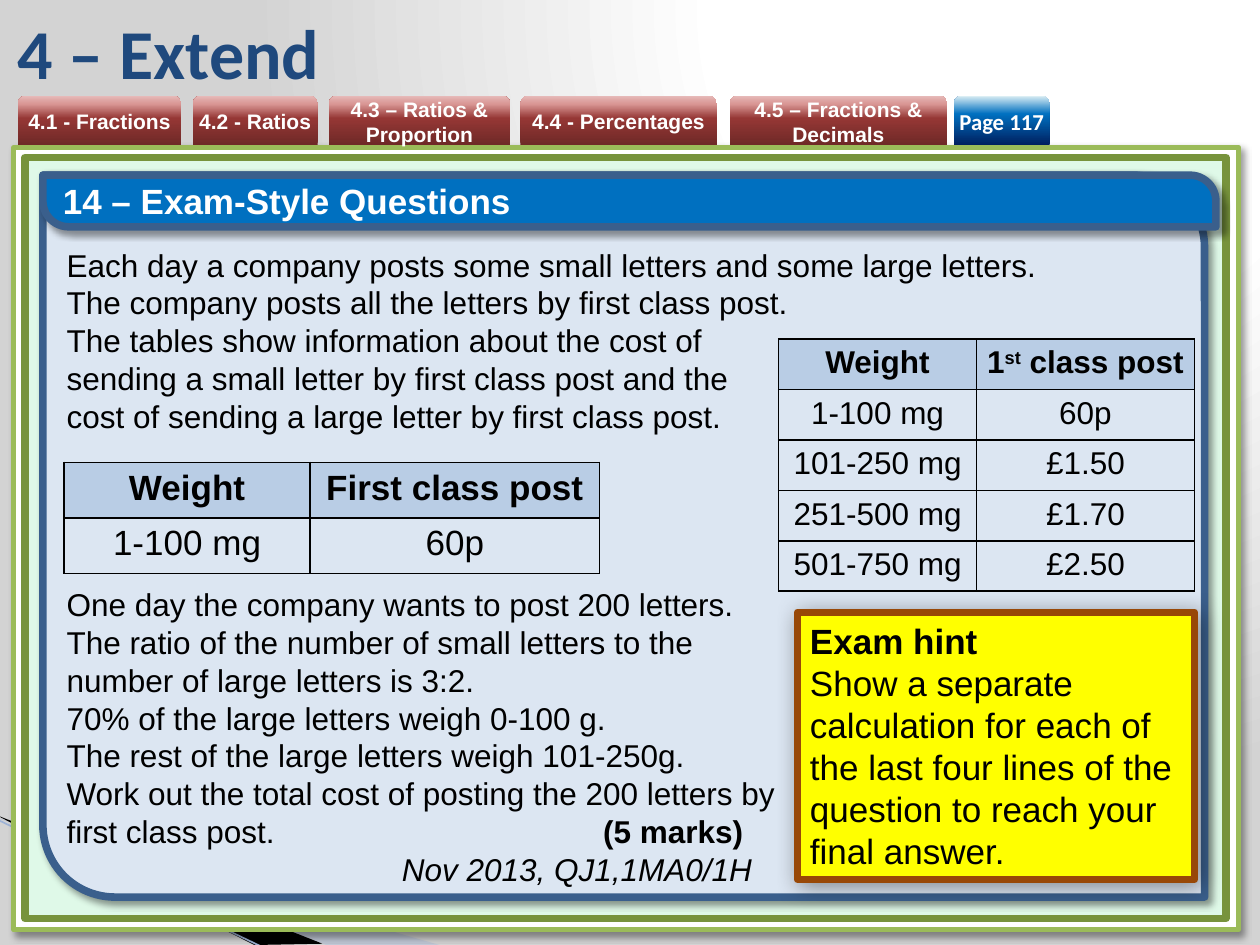
"""Build the exam-style question slide on the cost of posting letters."""
from pptx import Presentation
from pptx.dml.color import RGBColor
from pptx.enum.shapes import MSO_CONNECTOR as Connector, MSO_SHAPE as Shape
from pptx.enum.text import MSO_ANCHOR as Anchor, PP_ALIGN as Align
from pptx.oxml import parse_xml
from pptx.oxml.ns import nsdecls
from pptx.util import Inches, Pt

COLORS = {
    "white": "FFFFFF", "black": "000000", "title": "1F497D", "panel": "DCE6F2",
    "edge": "3A5F8C", "blue": "0070C0", "lime": "9BBB59", "olive": "77933C",
    "mint": "DFF9E8", "yellow": "FFFF00", "brown": "984807", "head": "B9CDE5",
    "wedge": "A7B9DB", "streak": "9EB3D6",
}
RED_STOPS = [(0, "6F2927"), (54, "953735"), (83, "D99694"), (100, "E6B9B8")]
BLUE_STOPS = [(0, "002060"), (63, "0070C0"), (100, "DBEEF4")]
PAGE_STOPS = [(0, "FFFFFF"), (40, "FFFFFF"), (100, "D3D3D3")]
UPWARD = '<a:lin ang="16200000" scaled="0"/>'
CIRCLE = '<a:path path="circle"><a:fillToRect l="65000" t="0" r="0" b="98000"/></a:path>'
TABS = [
    ("4.1 - Fractions", 0.14, 1.3), ("4.2 - Ratios", 1.53, 0.99),
    ("4.3 – Ratios & Proportion", 2.61, 1.44), ("4.4 - Percentages", 4.13, 1.56),
    ("4.5 – Fractions & Decimals", 5.79, 1.73),
]
QUESTION = [
    "Each day a company posts some small letters and some large letters.",
    "The company posts all the letters by first class post.",
    "The tables show information about the cost of\n"
    "sending a small letter by first class post and the\n"
    "cost of sending a large letter by first class post.",
    "One day the company wants to post 200 letters.",
    "The ratio of the number of small letters to the\nnumber of large letters is 3:2.",
    "70% of the large letters weigh 0-100 g.",
    "The rest of the large letters weigh 101-250g.",
    "Work out the total cost of posting the 200 letters by",
    [("first class post.\t", {}), ("(5 marks)", {"bold": True})],
    [("\t", {}), ("Nov 2013, QJ1,1MA0/1H", {"italic": True})],
]
SMALL_POST = [["Weight", "First class post"], ["1-100 mg", "60p"]]
LARGE_POST = [
    ["Weight", [("1", {}), ("st", {"raised": True}), (" class post", {})]],
    ["1-100 mg", "60p"], ["101-250 mg", "£1.50"],
    ["251-500 mg", "£1.70"], ["501-750 mg", "£2.50"],
]


def color(name):
    """Return the named colour."""
    return RGBColor.from_string(COLORS[name])


def add_span(para, text, size, font, ink, bold=False, italic=False, raised=False):
    """Add one formatted run to a paragraph."""
    span = para.add_run()
    span.text = text
    span.font.size, span.font.name = Pt(size), font
    span.font.bold, span.font.italic = bold, italic
    span.font.color.rgb = color(ink)
    if raised:
        span._r.get_or_add_rPr().set("baseline", "30000")


def write(frame, paragraphs, size=18, font="Arial", ink="black", bold=False,
          align=Align.LEFT, anchor=Anchor.MIDDLE, inset=None):
    """Fill a text frame with paragraphs given as strings or lists of spans."""
    frame.word_wrap, frame.vertical_anchor = True, anchor
    if inset is not None:
        frame.margin_left = frame.margin_right = Inches(inset)
        frame.margin_top = frame.margin_bottom = Inches(inset)
    for index, content in enumerate(paragraphs):
        para = frame.add_paragraph() if index else frame.paragraphs[0]
        para.alignment = align
        spans = [(content, {})] if isinstance(content, str) else content
        for text, changes in spans:
            for row, line in enumerate(text.split("\n")):
                if row:
                    para.add_line_break()
                add_span(para, line, **{"size": size, "font": font, "ink": ink,
                                        "bold": bold, **changes})


def set_gradient(owner, fill, stops, direction):
    """Give a fill gradient stops and a direction."""
    fill.gradient()
    old = owner.xpath(".//a:gradFill")[0]
    marks = "".join(f'<a:gs pos="{place * 1000}"><a:srgbClr val="{value}"/></a:gs>'
                    for place, value in stops)
    new = parse_xml(f'<a:gradFill {nsdecls("a")} rotWithShape="1">'
                    f'<a:gsLst>{marks}</a:gsLst>{direction}</a:gradFill>')
    old.getparent().replace(old, new)


def add_shadow(shape, blur=4):
    """Add a soft shadow to the lower right."""
    shape._element.spPr.append(parse_xml(
        f'<a:effectLst {nsdecls("a")}><a:outerShdw blurRad="{Pt(blur)}" dist="{Pt(3)}" '
        'dir="2700000" algn="tl" rotWithShape="0"><a:srgbClr val="000000">'
        '<a:alpha val="40000"/></a:srgbClr></a:outerShdw></a:effectLst>'))


def add_panel(slide, kind, place, fill, line, width, blur=None, corners=()):
    """Add a filled and outlined box."""
    box = slide.shapes.add_shape(kind, *map(Inches, place))
    for index, value in enumerate(corners):
        box.adjustments[index] = value
    box.fill.solid()
    box.fill.fore_color.rgb = color(fill)
    box.line.color.rgb, box.line.width = color(line), Pt(width)
    if blur is None:
        box.shadow.inherit = False
    else:
        add_shadow(box, blur)
    return box


def add_tab(slide, label, left, width, stops=RED_STOPS, **style):
    """Add a navigation tab."""
    tab = slide.shapes.add_shape(Shape.ROUND_2_SAME_RECTANGLE, Inches(left),
                                 Inches(0.76), Inches(width), Inches(0.39))
    set_gradient(tab._element, tab.fill, stops, UPWARD)
    tab.line.fill.background()
    tab.shadow.inherit = False
    write(tab.text_frame, [label], ink="white", bold=True, align=Align.CENTER,
          inset=0, **{"size": 12, **style})


def add_wedge(slide, points, fill, alpha=100):
    """Add a filled corner outline."""
    start, *rest = [(Inches(x), Inches(y)) for x, y in points]
    builder = slide.shapes.build_freeform(*start)
    builder.add_line_segments(rest)
    wedge = builder.convert_to_shape()
    wedge.fill.solid()
    wedge.fill.fore_color.rgb = color(fill)
    tint = wedge._element.spPr.xpath("./a:solidFill/a:srgbClr")[0]
    tint.append(parse_xml(f'<a:alpha {nsdecls("a")} val="{alpha * 1000}"/>'))
    wedge.line.fill.background()
    wedge.shadow.inherit = False


def add_streak(slide):
    """Add the thin line along the corner wedges."""
    streak = slide.shapes.add_connector(Connector.STRAIGHT, Inches(-0.01), Inches(6.51),
                                        Inches(2.09), Inches(7.52))
    streak.line.color.rgb, streak.line.width = color("streak"), Pt(0.95)
    streak._element.spPr.append(parse_xml(f'<a:effectLst {nsdecls("a")}/>'))


def add_prices(slide, rows, left, top, widths, height, size):
    """Add a ruled price table with a tinted heading row."""
    table = slide.shapes.add_table(len(rows), len(widths), Inches(left), Inches(top),
                                   Inches(sum(widths)), Inches(height * len(rows))).table
    for column, width in zip(table.columns, widths):
        column.width = Inches(width)
    for index, row in enumerate(rows):
        table.rows[index].height = Inches(height)
        for cell, content in zip(table.rows[index].cells, row):
            write(cell.text_frame, [content], size=size, bold=index == 0, align=Align.CENTER)
            cell.margin_left = cell.margin_right = Inches(0.05)
            cell.margin_top = cell.margin_bottom = Inches(0.05)
            cell.vertical_anchor = Anchor.TOP
            if index:
                cell.fill.background()
            else:
                cell.fill.solid()
                cell.fill.fore_color.rgb = color("head")
            for order, side in enumerate("LRTB"):
                cell._tc.get_or_add_tcPr().insert(order, parse_xml(
                    f'<a:ln{side} {nsdecls("a")} w="{Pt(1)}"><a:solidFill>'
                    f'<a:srgbClr val="{COLORS["black"]}"/></a:solidFill></a:ln{side}>'))


def add_question(slide):
    """Add the question text with its right tab and the gap for the small table."""
    box = slide.shapes.add_textbox(Inches(0.43), Inches(1.9), Inches(9.08), Inches(5.25))
    write(box.text_frame, QUESTION, anchor=Anchor.TOP)
    paragraphs = box.text_frame.paragraphs
    paragraphs[3].space_before = Pt(86)
    for para, stop in zip(paragraphs[-2:], (5.37, 5.44)):
        para._p.get_or_add_pPr().append(parse_xml(
            f'<a:tabLst {nsdecls("a")}><a:tab pos="{Inches(stop)}" algn="r"/></a:tabLst>'))


def main():
    """Build and save the deck."""
    deck = Presentation()
    deck.slide_width, deck.slide_height = Inches(10), Inches(7.5)
    slide = deck.slides.add_slide(deck.slide_layouts[5])
    set_gradient(slide.element, slide.background.fill, PAGE_STOPS, CIRCLE)
    title = slide.shapes.title
    title.left, title.top, title.width, title.height = map(Inches, (0.04, 0.05, 8.27, 0.71))
    write(title.text_frame, ["4 – Extend"], size=40, font="Calibri", ink="title", bold=True)
    add_wedge(slide, [(-0.01, 6.5), (3.49, 7.5), (2.59, 7.5), (-0.01, 6.49)], "wedge", 40)
    add_wedge(slide, [(0, 6.48), (2.56, 7.49), (2.02, 7.5), (0.01, 6.49)], "black")
    add_streak(slide)
    add_panel(slide, Shape.RECTANGLE, (0.11, 1.17, 9.72, 6.21), "white", "lime", 3, blur=4)
    add_panel(slide, Shape.RECTANGLE, (0.2, 1.25, 9.53, 6.04), "mint", "olive", 4.33)
    for label, left, width in TABS:
        add_tab(slide, label, left, width)
    add_tab(slide, "Page 117", 7.57, 0.76, BLUE_STOPS, size=13, font="Calibri")
    diagonal = Shape.ROUND_2_DIAG_RECTANGLE
    add_panel(slide, diagonal, (0.34, 1.39, 9.22, 5.73), "panel", "edge", 4.33, 4, (0, 0.1))
    header = add_panel(slide, diagonal, (0.34, 1.39, 9.31, 0.41), "blue", "edge", 4.33, 4, (0, 0.5))
    write(header.text_frame, ["14 – Exam-Style Questions"], size=20, ink="white", bold=True)
    add_question(slide)
    add_prices(slide, SMALL_POST, 0.51, 3.67, (1.95, 2.3), 0.44, 20)
    add_prices(slide, LARGE_POST, 6.18, 2.69, (1.57, 1.73), 0.4, 18)
    hint = add_panel(slide, Shape.RECTANGLE, (6.33, 4.86, 3.15, 2.12), "yellow", "brown", 4.33, 13)
    write(hint.text_frame, [
        [("Exam hint", {"bold": True})],
        "Show a separate calculation for each of the last four lines of the question "
        "to reach your final answer."], size=20)
    deck.save("out.pptx")


if __name__ == "__main__":
    main()
